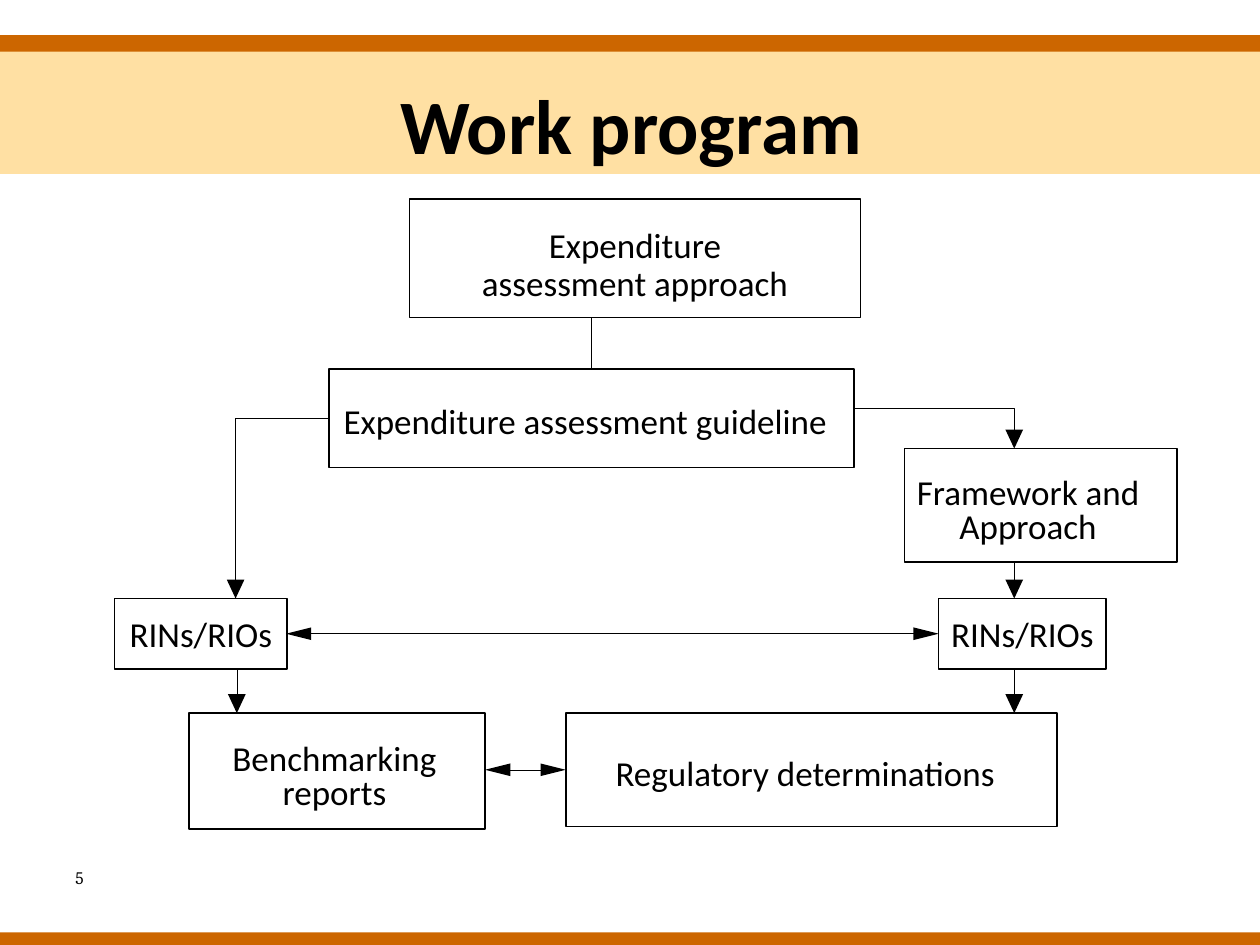
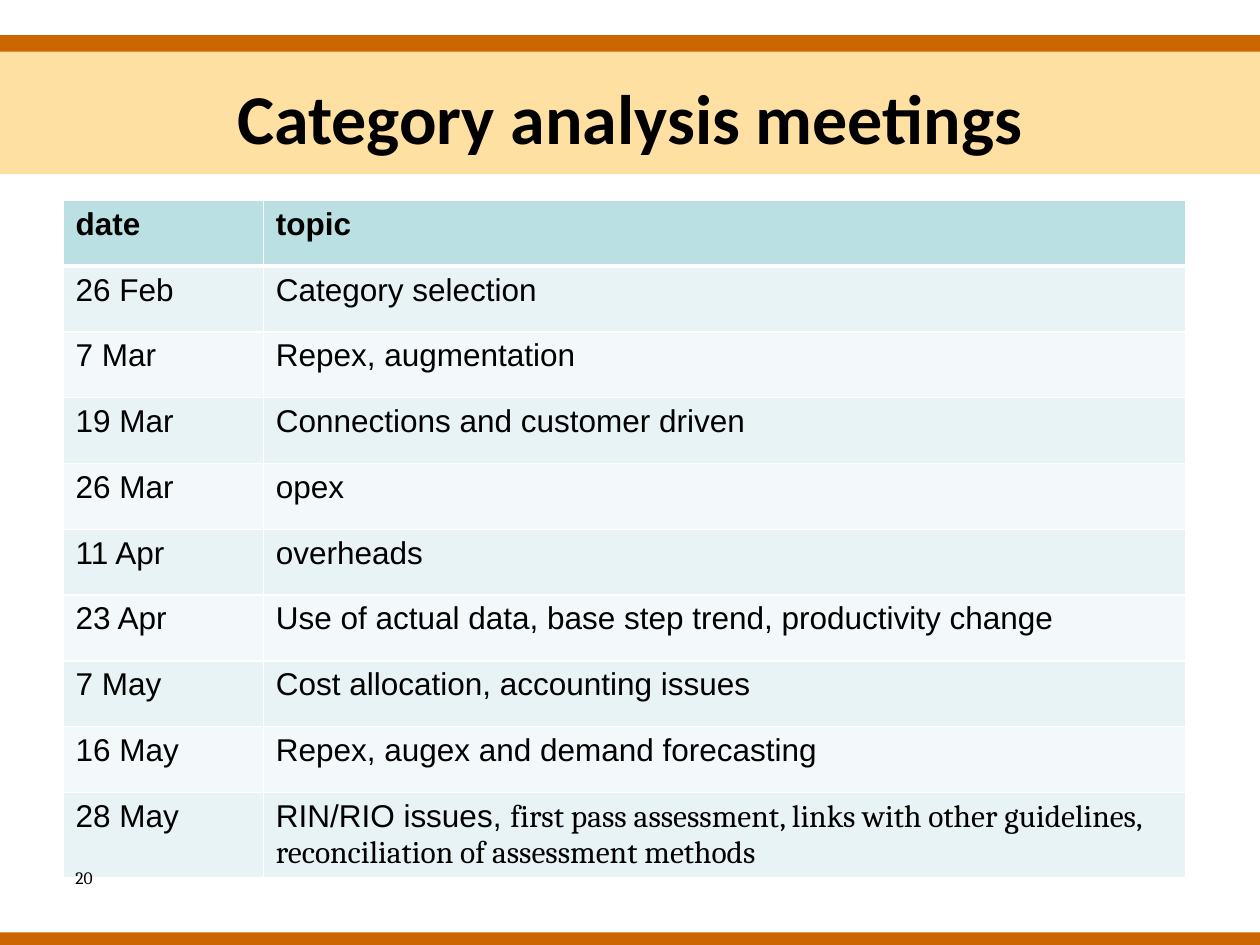
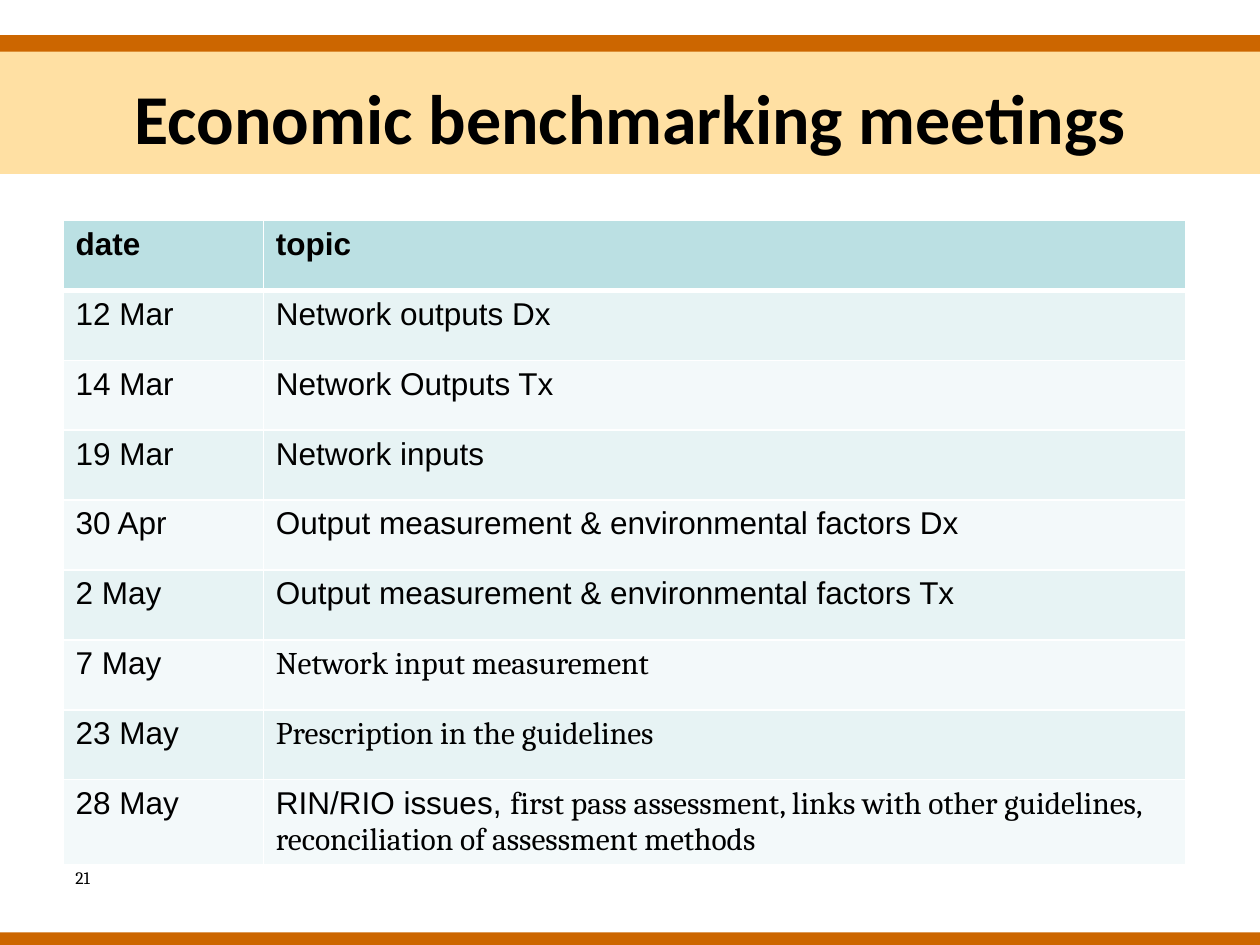
from lxml import etree
from pptx import Presentation
from pptx.dml.color import RGBColor
from pptx.enum.shapes import MSO_CONNECTOR, MSO_SHAPE
from pptx.enum.text import MSO_ANCHOR, PP_ALIGN
from pptx.oxml.ns import qn
from pptx.util import Inches, Pt

ORANGE = RGBColor(0xCC, 0x66, 0x00)
SAND = RGBColor(0xFF, 0xCC, 0x66)
BLACK = RGBColor(0x00, 0x00, 0x00)
WHITE = RGBColor(0xFF, 0xFF, 0xFF)
HEADER_TEAL = RGBColor(0xBB, 0xE0, 0xE3)
ROW_TINTS = [RGBColor(0xE7, 0xF3, 0xF4), RGBColor(0xF3, 0xF9, 0xFA)]

HEADING_FONT, TABLE_FONT, SERIF_FONT = "Calibri", "Arial", "Cambria"
COLUMN_WIDTHS = [1.59, 7.32]
HAIRLINE, BOX_LINE = Pt(0.35), Pt(0.9)


def plain(text, font=TABLE_FONT):
    """One paragraph with one run."""
    return [[(text, font)]]


SHARED_ISSUES = [
    [("RIN/RIO issues, ", TABLE_FONT),
     ("first pass assessment, links with other guidelines,", SERIF_FONT)],
    [("reconciliation of assessment methods", SERIF_FONT)],
]

CATEGORY_MEETINGS = [
    ("26 Feb", plain("Category selection")),
    ("7 Mar", plain("Repex, augmentation")),
    ("19 Mar", plain("Connections and customer driven")),
    ("26 Mar", plain("opex")),
    ("11 Apr", plain("overheads")),
    ("23 Apr", plain("Use of actual data, base step trend, productivity change")),
    ("7 May", plain("Cost allocation, accounting issues")),
    ("16 May", plain("Repex, augex and demand forecasting")),
    ("28 May", SHARED_ISSUES),
]

BENCHMARKING_MEETINGS = [
    ("12 Mar", plain("Network outputs Dx")),
    ("14 Mar", plain("Network Outputs Tx")),
    ("19 Mar", plain("Network inputs")),
    ("30 Apr", plain("Output measurement & environmental factors Dx")),
    ("2 May", plain("Output measurement & environmental factors Tx")),
    ("7 May", plain("Network input measurement", SERIF_FONT)),
    ("23 May", plain("Prescription in the guidelines", SERIF_FONT)),
    ("28 May", SHARED_ISSUES),
]

# Left, top, width, height, lines, top margin, right margin, line pitch
WORK_BOXES = [
    (3.25, 1.58, 3.58, 0.94, ["Expenditure", "assessment approach"], 0.12, 0, 0.3),
    (2.61, 2.93, 4.17, 0.78, ["Expenditure assessment guideline"], 0.04, 0.1, None),
    (7.18, 3.56, 2.16, 0.9, ["Framework and", "Approach"], 0.12, 0.2, 0.27),
    (0.91, 4.75, 1.37, 0.56, ["RINs/RIOs"], 0, 0, None),
    (7.45, 4.75, 1.33, 0.56, ["RINs/RIOs"], 0, 0, None),
    (1.5, 5.66, 2.35, 0.92, ["Benchmarking", "reports"], 0.12, 0.04, 0.27),
    (4.49, 5.66, 3.9, 0.9, ["Regulatory determinations"], 0.04, 0.1, None),
]


# Text
def add_run(paragraph, text, font, size, bold=False):
    run = paragraph.add_run()
    run.text = text
    run.font.name = font
    run.font.size = Pt(size)
    run.font.bold = bold
    run.font.color.rgb = BLACK


def fill_paragraphs(text_frame, paragraphs, size, bold=False):
    for index, runs in enumerate(paragraphs):
        paragraph = text_frame.add_paragraph() if index else text_frame.paragraphs[0]
        for text, font in runs:
            add_run(paragraph, text, font, size, bold)


# Shared slide parts
def add_bands(slide):
    """Draw the bands and move them to the layout, behind its placeholders."""
    layout_tree = slide.slide_layout.shapes.element
    bands = [(7.4, 0.13, ORANGE), (0.28, 1.1, SAND), (0.28, 0.13, ORANGE)]
    for index, (top, height, color) in enumerate(bands):
        band = slide.shapes.add_shape(
            MSO_SHAPE.RECTANGLE, 0, Inches(top), Inches(10), Inches(height))
        band.shadow.inherit = False
        band.fill.solid()
        band.fill.fore_color.rgb = color
        band.line.fill.background()
        if color == SAND:
            rgb = band.element.spPr.find(".//" + qn("a:srgbClr"))
            etree.SubElement(rgb, qn("a:alpha"), val="60000")
        band.element.nvSpPr.cNvPr.set("id", str(100 + index))
        layout_tree.insert(2 + index, band.element)


def add_titled_slide(presentation, title, left=0.5, top=0.3, size=40):
    slide = presentation.slides.add_slide(presentation.slide_layouts[5])
    placeholder = slide.shapes.title
    placeholder.left, placeholder.top = Inches(left), Inches(top)
    placeholder.width, placeholder.height = Inches(9), Inches(1.25)
    placeholder.text_frame.vertical_anchor = MSO_ANCHOR.MIDDLE
    paragraph = placeholder.text_frame.paragraphs[0]
    paragraph.alignment = PP_ALIGN.CENTER
    add_run(paragraph, title, HEADING_FONT, size, bold=True)
    return slide


def add_page_number(slide, number):
    """Added last on each slide, so that it stays in front of the content."""
    number_box = slide.shapes.add_textbox(
        Inches(0.5), Inches(6.83), Inches(3), Inches(0.52))
    number_box.text_frame.word_wrap = True
    fill_paragraphs(number_box.text_frame, plain(number, SERIF_FONT), 10)


# Flow chart
def add_box(slide, left, top, width, height, lines, margin_top, margin_right, pitch):
    box = slide.shapes.add_shape(
        MSO_SHAPE.RECTANGLE, Inches(left), Inches(top), Inches(width), Inches(height))
    box.shadow.inherit = False
    box.fill.solid()
    box.fill.fore_color.rgb = WHITE
    box.line.color.rgb = BLACK
    box.line.width = BOX_LINE
    frame = box.text_frame
    frame.word_wrap = False
    frame.vertical_anchor = MSO_ANCHOR.MIDDLE
    frame.margin_left = frame.margin_bottom = 0
    frame.margin_right = Inches(margin_right)
    frame.margin_top = Inches(margin_top)
    fill_paragraphs(frame, [[(line, HEADING_FONT)] for line in lines], 20)
    for paragraph in frame.paragraphs:
        paragraph.alignment = PP_ALIGN.CENTER
        if pitch:
            paragraph.line_spacing = Pt(pitch * 72)


def add_path(slide, points, close):
    corners = [(Inches(x), Inches(y)) for x, y in points]
    builder = slide.shapes.build_freeform(*corners[0])
    builder.add_line_segments(corners[1:], close=close)
    shape = builder.convert_to_shape()
    shape.shadow.inherit = False
    return shape


def add_arrowhead(slide, tip, before):
    """Draw a solid head at tip and return the middle of its base."""
    (x, y), (from_x, from_y) = tip, before
    if x == from_x:
        base = y - 0.15 if y > from_y else y + 0.15
        corners, end = [(x + 0.07, base), tip, (x - 0.07, base)], (x, base)
    else:
        base = x - 0.2 if x > from_x else x + 0.2
        corners, end = [(base, y + 0.05), tip, (base, y - 0.05)], (base, y)
    head = add_path(slide, corners, close=True)
    head.fill.solid()
    head.fill.fore_color.rgb = BLACK
    head.line.fill.background()
    return end


def add_link(slide, points, start_head=False, end_head=True):
    points = list(points)
    start, end = points[0], points[-1]
    if end_head:
        points[-1] = add_arrowhead(slide, end, points[-2])
    if start_head:
        points[0] = add_arrowhead(slide, start, points[1])
    if len(points) > 2:
        link = add_path(slide, points, close=False)
        link.fill.background()
    else:
        (x1, y1), (x2, y2) = points
        link = slide.shapes.add_connector(
            MSO_CONNECTOR.STRAIGHT, Inches(x1), Inches(y1), Inches(x2), Inches(y2))
        etree.SubElement(link.element.spPr, qn("a:effectLst"))
    link.line.color.rgb = BLACK
    link.line.width = HAIRLINE


# Meeting table
def set_borders(cell, top, bottom):
    properties = cell._tc.get_or_add_tcPr()
    for side, points in (("L", 1), ("R", 1), ("T", top), ("B", bottom)):
        line = etree.SubElement(properties, qn("a:ln" + side), w=str(Pt(points)))
        fill = etree.SubElement(line, qn("a:solidFill"))
        etree.SubElement(fill, qn("a:srgbClr"), val=str(WHITE))


def add_meeting_table(slide, meetings, top, single_rows_height):
    """Rows share one height; only the two-line last row grows beyond it."""
    rows = [("date", plain("topic"))] + meetings
    row_height = Inches(single_rows_height / len(meetings))
    table = slide.shapes.add_table(
        len(rows), 2, Inches(0.5), Inches(top),
        Inches(sum(COLUMN_WIDTHS)), row_height * len(rows)).table
    for column, width in zip(table.columns, COLUMN_WIDTHS):
        column.width = Inches(width)
    for index, (date, topic) in enumerate(rows):
        table.rows[index].height = row_height
        is_header = index == 0
        for column, content in enumerate([plain(date), topic]):
            cell = table.cell(index, column)
            set_borders(cell, top=3 if index == 1 else 1, bottom=3 if is_header else 1)
            cell.fill.solid()
            cell.fill.fore_color.rgb = HEADER_TEAL if is_header else ROW_TINTS[(index - 1) % 2]
            fill_paragraphs(cell.text_frame, content, 18, bold=is_header)


def main():
    presentation = Presentation()
    presentation.slide_width, presentation.slide_height = Inches(10), Inches(7.5)

    # Work program
    slide = add_titled_slide(presentation, "Work program", 0.51, 0.36, 44)
    add_bands(slide)
    for box in WORK_BOXES:
        add_box(slide, *box)
    add_link(slide, [(4.69, 2.52), (4.69, 2.93)], end_head=False)
    add_link(slide, [(6.78, 3.24), (8.05, 3.24), (8.05, 3.56)])
    add_link(slide, [(2.61, 3.32), (1.87, 3.32), (1.87, 4.75)])
    add_link(slide, [(8.05, 4.46), (8.05, 4.75)])
    add_link(slide, [(8.05, 5.31), (8.05, 5.66)])
    add_link(slide, [(1.88, 5.31), (1.88, 5.66)])
    add_link(slide, [(2.27, 5.03), (7.45, 5.03)], start_head=True)
    add_link(slide, [(3.85, 6.11), (4.49, 6.11)], start_head=True)
    add_page_number(slide, "5")

    # Meeting schedules
    schedules = [
        ("Category analysis meetings", "20", CATEGORY_MEETINGS, 1.59, 4.7),
        ("Economic benchmarking meetings", "21", BENCHMARKING_MEETINGS, 1.75, 4.44),
    ]
    for title, number, meetings, top, single_rows_height in schedules:
        slide = add_titled_slide(presentation, title)
        add_meeting_table(slide, meetings, top, single_rows_height)
        add_page_number(slide, number)

    presentation.save("out.pptx")


if __name__ == "__main__":
    main()
